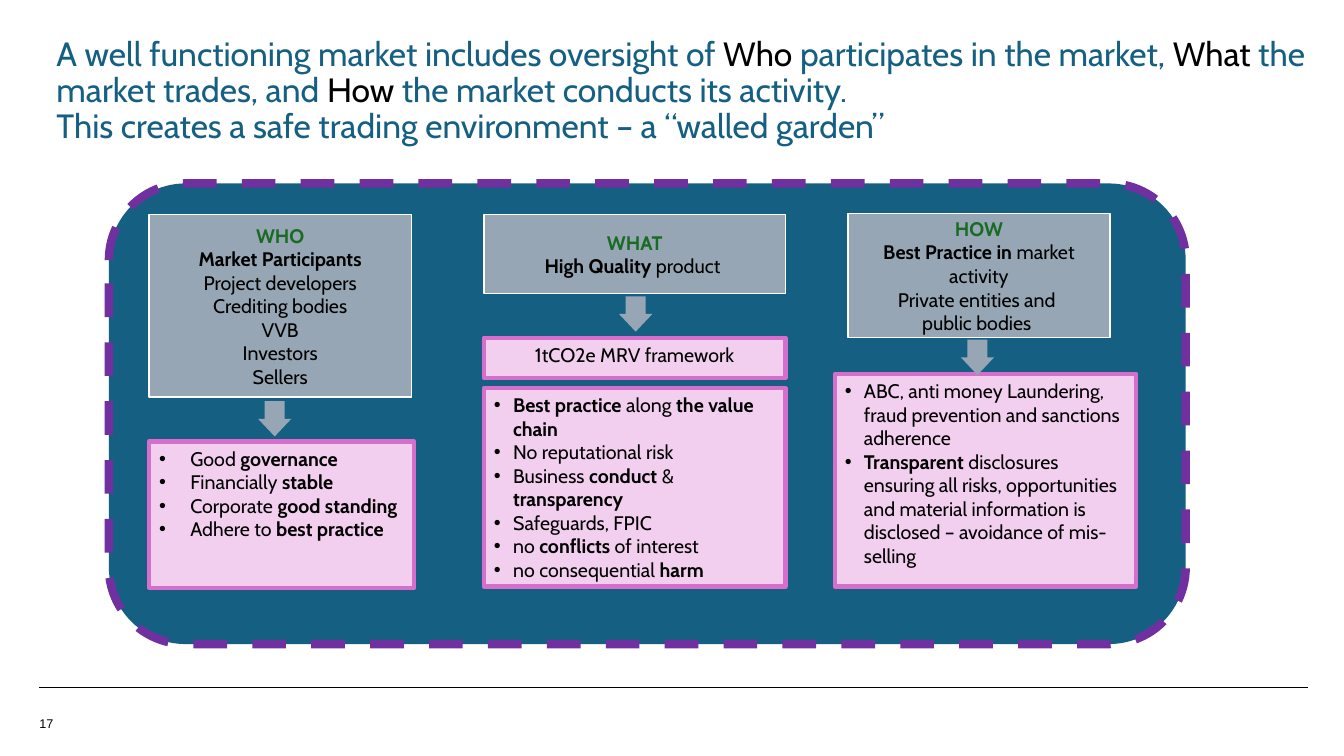
from pptx import Presentation
from pptx.dml.color import RGBColor
from pptx.enum.dml import MSO_LINE
from pptx.enum.shapes import MSO_CONNECTOR, MSO_SHAPE
from pptx.enum.text import MSO_ANCHOR, MSO_AUTO_SIZE, PP_ALIGN
from pptx.util import Inches, Pt
from lxml.etree import SubElement
from pptx.oxml.ns import qn

HUES = {"blue": "156082", "black": "000000", "white": "FFFFFF", "grey": "96A6B4",
        "green": "196B24", "pink": "F2CFEE", "rose": "D86ECC", "purple": "7030A0"}
TONES = {name: RGBColor.from_string(code) for name, code in HUES.items()}
CELL = Inches(0.1)

deck = Presentation()
deck.slide_width, deck.slide_height = Inches(13.33), Inches(7.5)
slide = deck.slides.add_slide(deck.slide_layouts[5])


def place(kind, box, fill, edge=None, width=1):
    shape = slide.shapes.add_shape(kind, *[int(n * CELL) for n in box])
    shape.shadow.inherit = False
    shape.fill.solid()
    shape.fill.fore_color.rgb = TONES[fill]
    if edge:
        shape.line.color.rgb = TONES[edge]
        shape.line.width = Pt(width)
    else:
        shape.line.fill.background()
    return shape


def write(frame, lines, tones, size=14, align=PP_ALIGN.CENTER, marks="*", indent=0):
    frame.word_wrap = True
    for row, line in enumerate(lines):
        para = frame.paragraphs[0] if row == 0 else frame.add_paragraph()
        para.alignment = align
        if indent:
            props = para._p.get_or_add_pPr()
            props.set("marL", str(Inches(indent)))
            props.set("indent", str(-Inches(indent)))
            SubElement(props, qn("a:buFont")).set("typeface", "Arial")
            SubElement(props, qn("a:buChar")).set("char", "•")
        for turn, part in enumerate(line.split(marks)):
            if part:
                run = para.add_run()
                run.text = part
                run.font.name = "Cabin"
                run.font.size = Pt(size)
                run.font.bold = marks == "*" and turn % 2 == 1
                tone = tones[turn % 2] if marks == "|" else tones[min(row, 1)]
                run.font.color.rgb = TONES[tone]


title = slide.shapes.title
title.left, title.top, title.width, title.height = [int(n * CELL) for n in (4.6, 3.2, 127.9, 11.9)]
title.fill.solid()
title.fill.fore_color.rgb = TONES["white"]
frame = title.text_frame
frame.auto_size = MSO_AUTO_SIZE.NONE
frame.vertical_anchor = MSO_ANCHOR.TOP
write(frame, [
    "A well functioning market includes oversight of |Who| participates in the market, "
    "|What| the market trades, and |How| the market conducts its activity.",
    "This creates a safe trading environment – a “walled garden”",
], ("blue", "black"), 24, PP_ALIGN.LEFT, "|")
for para in frame.paragraphs:
    para.line_spacing = 0.9

wall = place(MSO_SHAPE.ROUNDED_RECTANGLE, (10.8, 18.2, 106.8, 45.7), "blue", "purple", 6)
wall.line.dash_style = MSO_LINE.DASH

heads = [
    ((14.8, 21.3, 26, 18.1),
     ["*WHO*", "*Market Participants*", "Project developers", "Crediting bodies",
      "VVB", "Investors", "Sellers"]),
    ((48, 21.3, 29.9, 7.8), ["*WHAT*", "*High Quality* product "]),
    ((84.1, 21.2, 26, 12.3),
     ["*HOW*", "*Best Practice in *market activity", "Private entities and ", "public bodies "]),
]
for box, lines in heads:
    head = place(MSO_SHAPE.RECTANGLE, box, "grey", "white")
    head.text_frame.vertical_anchor = MSO_ANCHOR.MIDDLE
    write(head.text_frame, lines, ("green", "black"))

cards = [
    ((14.8, 43.8, 26.3, 14.5), 0.31,
     ["Good *governance*", "Financially *stable*", "Corporate *good standing*",
      "Adhere to *best practice*"]),
    ((48, 33.5, 29.9, 4), 0, ["1tCO2e MRV framework"]),
    ((48, 38.5, 29.9, 19.7), 0.19,
     ["*Best practice *along *the value chain*", "No reputational risk",
      "Business *conduct* & *transparency*", "Safeguards, FPIC",
      "no *conflicts* of interest", "no consequential *harm*"]),
    ((82.8, 37.1, 29.9, 21.1), 0.19,
     ["ABC, anti money Laundering, fraud prevention and sanctions adherence",
      "*Transparent* disclosures ensuring all risks, opportunities and material "
      "information is disclosed – avoidance of mis-selling"]),
]
for box, indent, lines in cards:
    card = place(MSO_SHAPE.RECTANGLE, box, "pink", "rose", 3)
    card.text_frame.vertical_anchor = MSO_ANCHOR.TOP
    align = PP_ALIGN.LEFT if indent else PP_ALIGN.CENTER
    write(card.text_frame, lines, ("black", "black"), align=align, indent=indent)

for left, top in ((25.6, 39.8), (61.4, 29.4), (95.3, 33.7)):
    arrow = place(MSO_SHAPE.DOWN_ARROW, (left, top, 3.3, 3.5), "grey")
    arrow.adjustments[0] = 0.6
    arrow.adjustments[1] = 0.53

ends = [int(n * CELL) for n in (3.9, 68.2, 129.7, 68.2)]
rule = slide.shapes.add_connector(MSO_CONNECTOR.STRAIGHT, *ends)
rule.line.color.rgb = TONES["black"]
rule.line.width = Pt(1)
SubElement(rule._element.spPr, qn("a:effectLst"))

page = slide.shapes.add_textbox(*[int(n * CELL) for n in (3.9, 70.8, 3.9, 2)]).text_frame
page.margin_left = page.margin_right = page.margin_top = page.margin_bottom = 0
page.vertical_anchor = MSO_ANCHOR.MIDDLE
page.word_wrap = True
run = page.paragraphs[0].add_run()
run.text = "17"
run.font.name = "Arial"
run.font.size = Pt(9)
run.font.color.rgb = TONES["black"]

deck.save("out.pptx")
